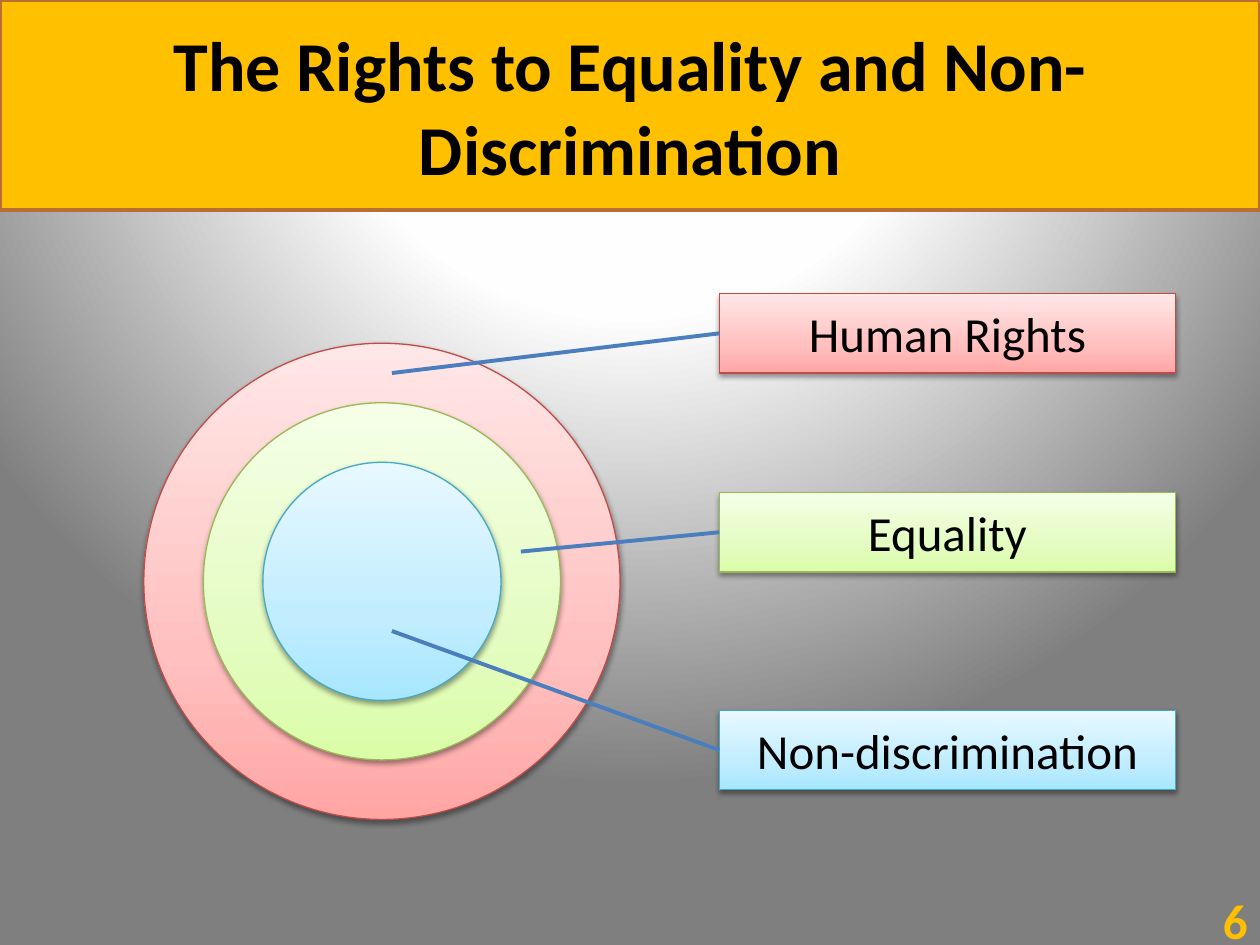
"""Build the slide on equality and non-discrimination as nested rights."""
from dataclasses import dataclass
from lxml import etree
from pptx import Presentation
from pptx import util as u
from pptx.dml import color
from pptx.enum import shapes, text
from pptx.oxml import ns


@dataclass(frozen=True)
class Theme:
    font: str = "Calibri"
    title_size: int = 40
    label_size: int = 28
    ink: str = "000000"
    gold: str = "FFC000"
    gold_edge: str = "B76F34"
    leader: str = "4B7EBC"
    backdrop: tuple = ((0, "FFFFFF"), (40, "FEFEFE"), (100, "7F7F7F"))
    red: tuple = ("BF4C48", ((0, "FFA6A5"), (35, "FFC0BF"), (100, "FFE7E7")))
    green: tuple = ("98B955", ((0, "DAFDA7"), (35, "E4FCC2"), (100, "F5FFE7")))
    blue: tuple = ("46AAC5", ((0, "A7E6FF"), (35, "C1EDFF"), (100, "E7F8FF")))


def set_stops(gradient, stops):
    stop_list = gradient.find(ns.qn("a:gsLst"))
    stop_list.clear()
    for position, value in stops:
        stop = etree.SubElement(stop_list, ns.qn("a:gs"), pos=str(position * 1000))
        etree.SubElement(stop, ns.qn("a:srgbClr"), val=value)


def write(box, words, size, value, align, bold=False):
    frame = box.text_frame
    frame.word_wrap = True
    frame.vertical_anchor = text.MSO_ANCHOR.MIDDLE
    para = frame.paragraphs[0]
    para.text = words
    para.alignment = align
    para.font.name = theme.font
    para.font.size = u.Pt(size)
    para.font.bold = bold
    para.font.color.rgb = color.RGBColor.from_string(value)


theme = Theme()
deck = Presentation()
deck.slide_width, deck.slide_height = u.Cm(25.4), u.Cm(19.05)
page = deck.slides.add_slide(deck.slide_layouts[6])

page.background.fill.gradient()
backdrop = page.element.find(".//" + ns.qn("a:gradFill"))
set_stops(backdrop, theme.backdrop)
backdrop.remove(backdrop.find(ns.qn("a:lin")))
glow = etree.SubElement(backdrop, ns.qn("a:path"), {"path": "circle"})
etree.SubElement(glow, ns.qn("a:fillToRect"), l="50000", t="-80000", r="50000", b="180000")

title = page.shapes.add_shape(shapes.MSO_SHAPE.RECTANGLE, 0, 0, deck.slide_width, u.Cm(4.24))
title.shadow.inherit = False
title.fill.solid()
title.fill.fore_color.rgb = color.RGBColor.from_string(theme.gold)
title.line.color.rgb = color.RGBColor.from_string(theme.gold_edge)
title.line.width = u.Pt(2)
write(title, "The Rights to Equality and Non-Discrimination",
      theme.title_size, theme.ink, text.PP_ALIGN.CENTER, True)

center_x, center_y = 7.7, 11.72
label_left, label_width, label_height = 14.5, 9.2, 1.6
levels = [
    ("Human Rights", theme.red, 9.6, 5.92, (7.9, 7.52)),
    ("Equality", theme.green, 7.2, 9.93, (10.5, 11.12)),
    ("Non-discrimination", theme.blue, 4.8, 14.32, (7.9, 12.72)),
]
panels = [("", colors, shapes.MSO_SHAPE.OVAL,
           (center_x - size / 2, center_y - size / 2, size, size))
          for _, colors, size, _, _ in levels]
panels += [(words, colors, shapes.MSO_SHAPE.RECTANGLE,
            (label_left, top, label_width, label_height))
           for words, colors, _, top, _ in levels]

for words, (edge, stops), kind, bounds in panels:
    panel = page.shapes.add_shape(kind, *map(u.Cm, bounds))
    panel.fill.gradient()
    panel.fill.gradient_angle = 90
    set_stops(panel.element.spPr.find(ns.qn("a:gradFill")), stops)
    panel.line.color.rgb = color.RGBColor.from_string(edge)
    panel.line.width = u.Pt(0.75)
    panel.shadow.inherit = False
    effects = panel.element.spPr.find(ns.qn("a:effectLst"))
    shadow = etree.SubElement(effects, ns.qn("a:outerShdw"), blurRad="40000",
                              dist="20000", dir="5400000", rotWithShape="0")
    shade = etree.SubElement(shadow, ns.qn("a:srgbClr"), val=theme.ink)
    etree.SubElement(shade, ns.qn("a:alpha"), val="38000")
    if words:
        write(panel, words, theme.label_size, theme.ink, text.PP_ALIGN.CENTER)

for _, _, _, top, (start_x, start_y) in levels:
    leader = page.shapes.add_connector(
        shapes.MSO_CONNECTOR.STRAIGHT, u.Cm(start_x), u.Cm(start_y),
        u.Cm(label_left), u.Cm(top + label_height / 2))
    leader.line.color.rgb = color.RGBColor.from_string(theme.leader)
    leader.line.width = u.Pt(2.25)
    etree.SubElement(leader.element.spPr, ns.qn("a:effectLst"))

number = page.shapes.add_textbox(u.Cm(23.16), u.Cm(18.03), u.Cm(2.24), u.Cm(1.02))
write(number, "6", theme.label_size, theme.gold, text.PP_ALIGN.RIGHT, True)

deck.save("out.pptx")
